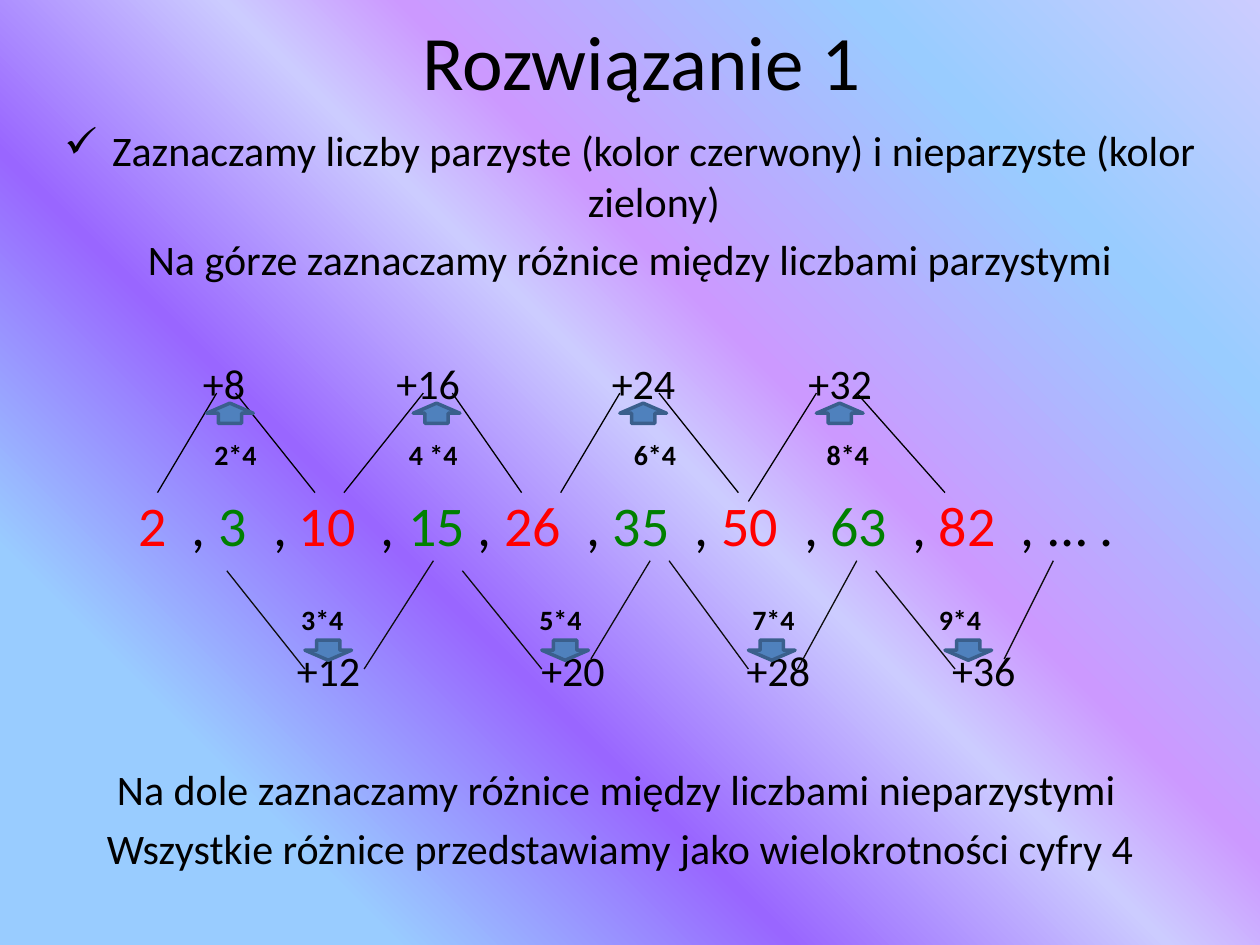
from dataclasses import dataclass

from lxml import etree
from pptx import Presentation
from pptx.dml.color import RGBColor as RGB
from pptx.enum.shapes import MSO_CONNECTOR as CONN, MSO_SHAPE as SHAPE
from pptx.enum.text import MSO_ANCHOR as ANCHOR, PP_ALIGN as ALIGN
from pptx.oxml.ns import qn
from pptx.util import Inches, Pt


@dataclass(frozen=True)
class Theme:
    """Colours, font and type sizes of the slide."""
    font: str = "Calibri"
    black: str = "000000"
    even: str = "FF0000"
    odd: str = "008000"
    lower_line: str = "0D0D0D"
    arrow: str = "4F81BD"
    arrow_edge: str = "3A5F8C"
    title: int = 44
    number: int = 32
    text: int = 24
    factor: int = 16
    sky: tuple = ((18, "99CCFF"), (36, "9966FF"), (53, "CCCCFF"),
                  (61, "CC99FF"), (82, "99CCFF"), (100, "CCCCFF"))


T = Theme()
NUMBERS = (2, 3, 10, 15, 26, 35, 50, 63, 82)
NUMBER_TABS = (1.11, 1.75, 2.5, 3.37, 4.13, 4.99, 5.85, 6.72, 7.58)
COMMA_TABS = (1.48, 2.13, 2.98, 3.75, 4.61, 5.47, 6.34, 7.2, 8.06)
END_TAB = 8.48
UPPER_TENTS = (
    ((0, 0.79), (0.47, 0), (0.62, 0), (1.25, 0.79)),
    ((1.48, 0.79), (2.11, 0), (2.34, 0), (2.89, 0.79)),
    ((3.2, 0.79), (3.67, 0), (3.98, 0), (4.61, 0.79)),
    ((4.69, 0.86), (5.23, 0), (5.55, 0), (6.25, 0.79)),
)
LOWER_TENTS = (
    ((0, 0.08), (0.62, 0.86), (1.09, 0.86), (1.64, 0)),
    ((1.87, 0.08), (2.5, 0.86), (2.89, 0.78), (3.36, 0)),
    ((3.51, 0), (4.14, 0.86), (4.53, 0.86), (5, 0)),
    ((5.15, 0.08), (5.78, 0.86), (6.17, 0.78), (6.56, 0)),
)


def add_background(s):
    """Fill the background with the diagonal gradient."""
    fill = s.background.fill
    fill.gradient()
    fill.gradient_angle = 45
    stops = s.element.xpath(".//a:gsLst")[0]
    for stop in list(stops):
        stops.remove(stop)
    for pos, color in T.sky:
        gs = etree.SubElement(stops, qn("a:gs"), pos=str(pos * 1000))
        etree.SubElement(gs, qn("a:srgbClr"), val=color)


def add_title(s, box, text):
    """Place and format the title placeholder."""
    sp = s.shapes.title
    sp.left, sp.top, sp.width, sp.height = map(Inches, box)
    tf = sp.text_frame
    tf.vertical_anchor = ANCHOR.MIDDLE
    p = tf.paragraphs[0]
    p.text, p.alignment = text, ALIGN.CENTER
    p.font.name, p.font.size = T.font, Pt(T.title)
    p.font.color.rgb = RGB.from_string(T.black)


def add_line(tf, runs, size, before, align=ALIGN.LEFT, bold=False):
    """Append a paragraph of (text, colour) runs."""
    p = tf.paragraphs[0] if not tf.text else tf.add_paragraph()
    p.alignment, p.space_before = align, Pt(before)
    p.font.name, p.font.size, p.font.bold = T.font, Pt(size), bold
    for text, color in runs:
        r = p.add_run()
        r.text = text
        r.font.color.rgb = RGB.from_string(color)
    return p


def indent(p, left, first=0):
    """Set the left margin and first-line indent of a paragraph."""
    pPr = p._p.get_or_add_pPr()
    pPr.set("marL", str(Inches(left)))
    pPr.set("indent", str(Inches(first)))
    return pPr


def add_row(tf, cells, size, before, bold=False):
    """Append a row of (tab, text, colour) cells centred on tab stops."""
    runs = [(f"\t{text}", color) for _, text, color in cells]
    p = add_line(tf, runs, size, before, bold=bold)
    tabs = etree.Element(qn("a:tabLst"))
    for tab, _, _ in cells:
        etree.SubElement(tabs, qn("a:tab"), pos=str(Inches(tab)), algn="ctr")
    p._p.get_or_add_pPr().find(qn("a:defRPr")).addprevious(tabs)


def add_labels(tf, tabs, texts, size, before, bold=False):
    """Append a row of black labels."""
    cells = [(tab, text, T.black) for tab, text in zip(tabs, texts)]
    add_row(tf, cells, size, before, bold)


def add_body(s, box):
    """Write the explanation and the number sequence with its differences."""
    tf = s.shapes.add_textbox(*map(Inches, box)).text_frame
    tf.word_wrap = True
    p = add_line(tf, [("Zaznaczamy liczby parzyste (kolor czerwony) i nieparzyste "
                       "(kolor zielony)", T.black)], T.text, 4.8, ALIGN.CENTER)
    mark = etree.Element(qn("a:buChar"), char="✓")
    indent(p, 0.38, -0.38).find(qn("a:defRPr")).addprevious(mark)
    add_line(tf, [("Na górze zaznaczamy różnice między liczbami parzystymi", T.black)],
             T.text, 4.8, ALIGN.CENTER)

    add_labels(tf, (1.68, 3.3, 5.01, 6.57), ("+8", "+16", "+24", "+32"), T.text, 41.7)
    add_labels(tf, (1.77, 3.34, 5.1, 6.63), ("2*4", "4 *4", "6*4", "8*4"),
               T.factor, 17.3, True)
    cells = []
    for n, tab, comma in zip(NUMBERS, NUMBER_TABS, COMMA_TABS):
        cells += [(tab, n, T.odd if n % 2 else T.even), (comma, ",", T.black)]
    add_row(tf, cells + [(END_TAB, "… .", T.black)], T.number, 10.7)
    add_labels(tf, (2.46, 4.35, 6.04, 7.52), ("3*4", "5*4", "7*4", "9*4"),
               T.factor, 26, True)
    add_labels(tf, (2.51, 4.45, 6.08, 7.71), ("+12", "+20", "+28", "+36"), T.text, 4.8)

    for text, left, before in (
            ("Na dole zaznaczamy różnice między liczbami nieparzystymi", 0.83, 39),
            ("Wszystkie różnice przedstawiamy jako wielokrotności cyfry 4", 0.75, 4.8)):
        indent(add_line(tf, [(text, T.black)], T.text, before), left)


def add_tents(s, left, top, tents, color):
    """Draw the two slanted lines of each tent."""
    for tent in tents:
        points = [(Inches(left + x), Inches(top + y)) for x, y in tent]
        for start, end in (points[:2], points[2:]):
            line = s.shapes.add_connector(CONN.STRAIGHT, *start, *end)
            line.line.color.rgb = RGB.from_string(color)
            line.line.width = Pt(0.75)
            etree.SubElement(line._element.spPr, qn("a:effectLst"))


def add_arrows(s, lefts, top, rotation=0):
    """Draw a row of block arrows."""
    for left in lefts:
        sp = s.shapes.add_shape(SHAPE.UP_ARROW, Inches(left), Inches(top),
                                Inches(0.37), Inches(0.16))
        sp.rotation = rotation
        sp.shadow.inherit = False
        sp.fill.solid()
        sp.fill.fore_color.rgb = RGB.from_string(T.arrow)
        sp.line.color.rgb = RGB.from_string(T.arrow_edge)
        sp.line.width = Pt(2)


def main():
    """Build the slide and save it."""
    prs = Presentation()
    prs.slide_width, prs.slide_height = Inches(10), Inches(7.5)
    s = prs.slides.add_slide(prs.slide_layouts[5])
    add_background(s)
    add_title(s, (0.94, 0, 8.3, 0.94), "Rozwiązanie 1")
    add_body(s, (0, 0.94, 10, 6.33))
    add_tents(s, 1.25, 3.12, UPPER_TENTS, T.black)
    add_arrows(s, (1.64, 3.28, 4.92, 6.48), 3.2)
    add_tents(s, 1.8, 4.45, LOWER_TENTS, T.lower_line)
    add_arrows(s, (2.42, 4.3, 5.94, 7.5), 5.08, 180)
    prs.save("out.pptx")


if __name__ == "__main__":
    main()
